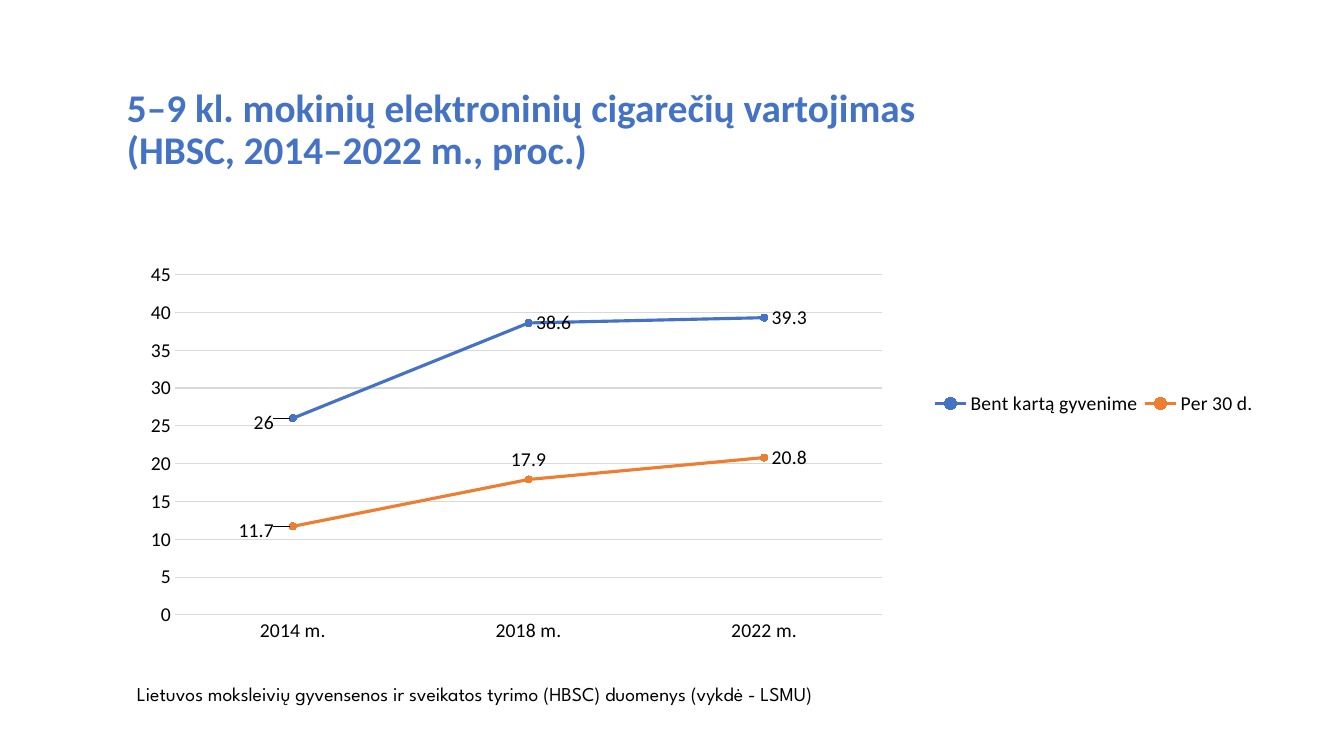
import pptx
import pptx.util
import pptx.dml.color
import pptx.chart.data
import pptx.enum.chart
import pptx.enum.text
import pptx.oxml
import pptx.oxml.ns

Pt = pptx.util.Pt
LabelPosition = pptx.enum.chart.XL_LABEL_POSITION
BLUE, ORANGE, BLACK, GRAY = "4472C4", "ED7D31", "000000", "D9D9D9"


def style_font(font, size, name, color, bold=False):
    font.size = Pt(size)
    font.name = name
    font.bold = bold
    font.color.rgb = pptx.dml.color.RGBColor.from_string(color)


def set_layout(parent, index, target=None, mode="edge", **fractions):
    for layout in parent.findall(pptx.oxml.ns.qn("c:layout")):
        parent.remove(layout)
    inner = f'<c:layoutTarget val="{target}"/>' if target else ""
    if mode == "edge":
        inner += '<c:xMode val="edge"/><c:yMode val="edge"/>'
    inner += "".join(f'<c:{key} val="{value}"/>' for key, value in fractions.items())
    namespace = pptx.oxml.ns.nsdecls("c")
    parent.insert(index, pptx.oxml.parse_xml(
        f"<c:layout {namespace}><c:manualLayout>{inner}</c:manualLayout></c:layout>"))


presentation = pptx.Presentation()
presentation.slide_width = Pt(960)
presentation.slide_height = Pt(540)
slide = presentation.slides.add_slide(presentation.slide_layouts[5])

title = slide.shapes.title
title.left, title.top, title.width, title.height = Pt(83.5), Pt(62.6), Pt(739.4), Pt(64.8)
title.text_frame.text = "5–9 kl. mokinių elektroninių cigarečių vartojimas \v(HBSC, 2014–2022 m., proc.)"
title.text_frame.auto_size = pptx.enum.text.MSO_AUTO_SIZE.NONE
title.text_frame.vertical_anchor = pptx.enum.text.MSO_ANCHOR.BOTTOM
paragraph = title.text_frame.paragraphs[0]
paragraph.alignment = pptx.enum.text.PP_ALIGN.LEFT
paragraph.line_spacing = 0.9
for run in paragraph.runs:
    style_font(run.font, 28, "Calibri", BLUE, bold=True)

chart_data = pptx.chart.data.CategoryChartData()
chart_data.categories = ["2014 m.", "2018 m.", "2022 m."]
chart_data.add_series("Bent kartą gyvenime", [26, 38.6, 39.3])
chart_data.add_series("Per 30 d.", [11.7, 17.9, 20.8])
chart = slide.shapes.add_chart(
    pptx.enum.chart.XL_CHART_TYPE.LINE_MARKERS,
    Pt(90.7), Pt(182.9), Pt(817.2), Pt(288.7), chart_data).chart
style_font(chart.font, 14, "Calibri", BLACK)
chart.has_title = False
chart.plots[0].vary_by_categories = False

for axis in (chart.category_axis, chart.value_axis):
    axis.major_tick_mark = pptx.enum.chart.XL_TICK_MARK.NONE
    axis.minor_tick_mark = pptx.enum.chart.XL_TICK_MARK.NONE
    style_font(axis.tick_labels.font, 14, "Calibri", BLACK)
chart.value_axis.minimum_scale = 0
chart.value_axis.maximum_scale = 45
chart.value_axis.major_unit = 5
chart.value_axis.has_major_gridlines = True
chart.value_axis.format.line.fill.background()
for line in (chart.category_axis.format.line, chart.value_axis.major_gridlines.format.line):
    line.color.rgb = pptx.dml.color.RGBColor.from_string(GRAY)
    line.width = Pt(0.75)

point_positions = [
    {0: LabelPosition.LEFT},
    {0: LabelPosition.LEFT, 1: LabelPosition.ABOVE},
]
for series, color, positions in zip(chart.plots[0].series, (BLUE, ORANGE), point_positions):
    series_color = pptx.dml.color.RGBColor.from_string(color)
    series.smooth = False
    series.format.line.color.rgb = series_color
    series.format.line.width = Pt(2.25)
    series.marker.style = pptx.enum.chart.XL_MARKER_STYLE.CIRCLE
    series.marker.size = 5
    series.marker.format.fill.solid()
    series.marker.format.fill.fore_color.rgb = series_color
    series.marker.format.line.color.rgb = series_color
    series.data_labels.show_value = True
    series.data_labels.position = LabelPosition.RIGHT
    style_font(series.data_labels.font, 14, "Calibri", BLACK)
    for index, position in positions.items():
        label = series.points[index].data_label
        style_font(label.font, 14, "Calibri", BLACK)
        label.position = position

chart.has_legend = True
chart.legend.position = pptx.enum.chart.XL_LEGEND_POSITION.RIGHT
chart.legend.include_in_layout = False
style_font(chart.legend.font, 14, "Calibri", BLACK)

chart_xml = chart.element
set_layout(chart_xml.xpath(".//c:plotArea")[0], 0, "inner", x=0.042, y=0.046, w=0.618, h=0.842)
set_layout(chart_xml.xpath(".//c:legend")[0], 1, x=0.7, y=0.32, w=0.29, h=0.09)
for first_label in chart_xml.xpath('.//c:dLbl[c:idx/@val="0"]'):
    set_layout(first_label, 1, mode="factor", x=-0.01, y=0.01)

source_note = slide.shapes.add_textbox(Pt(90.7), Pt(483.8), Pt(745.9), Pt(24.5))
source_note.text_frame.word_wrap = True
source_note.text_frame.auto_size = pptx.enum.text.MSO_AUTO_SIZE.SHAPE_TO_FIT_TEXT
source_note.text_frame.text = "Lietuvos moksleivių gyvensenos ir sveikatos tyrimo (HBSC) duomenys (vykdė - LSMU)"
style_font(source_note.text_frame.paragraphs[0].runs[0].font, 14, "League Spartan", BLACK)

presentation.save("out.pptx")
